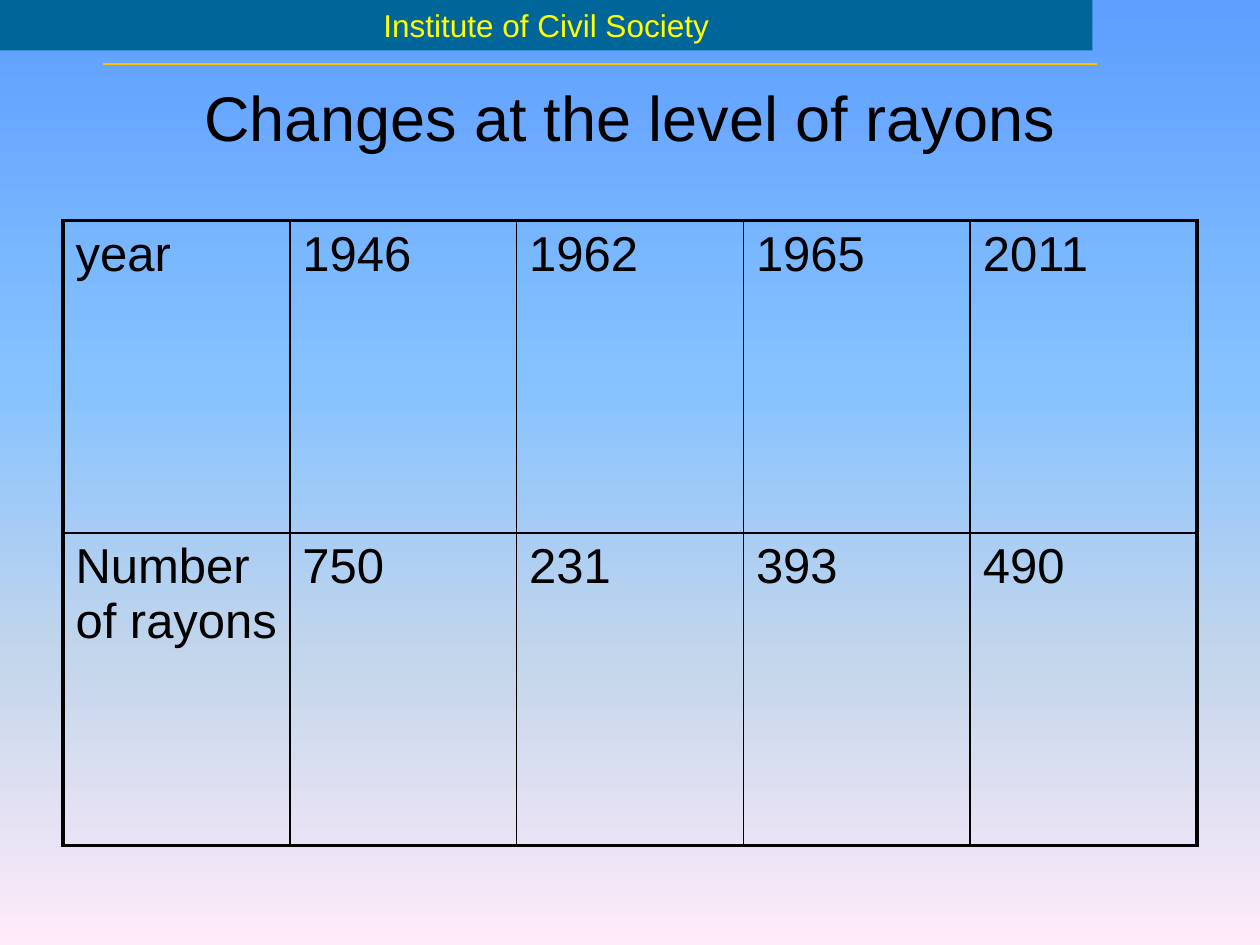
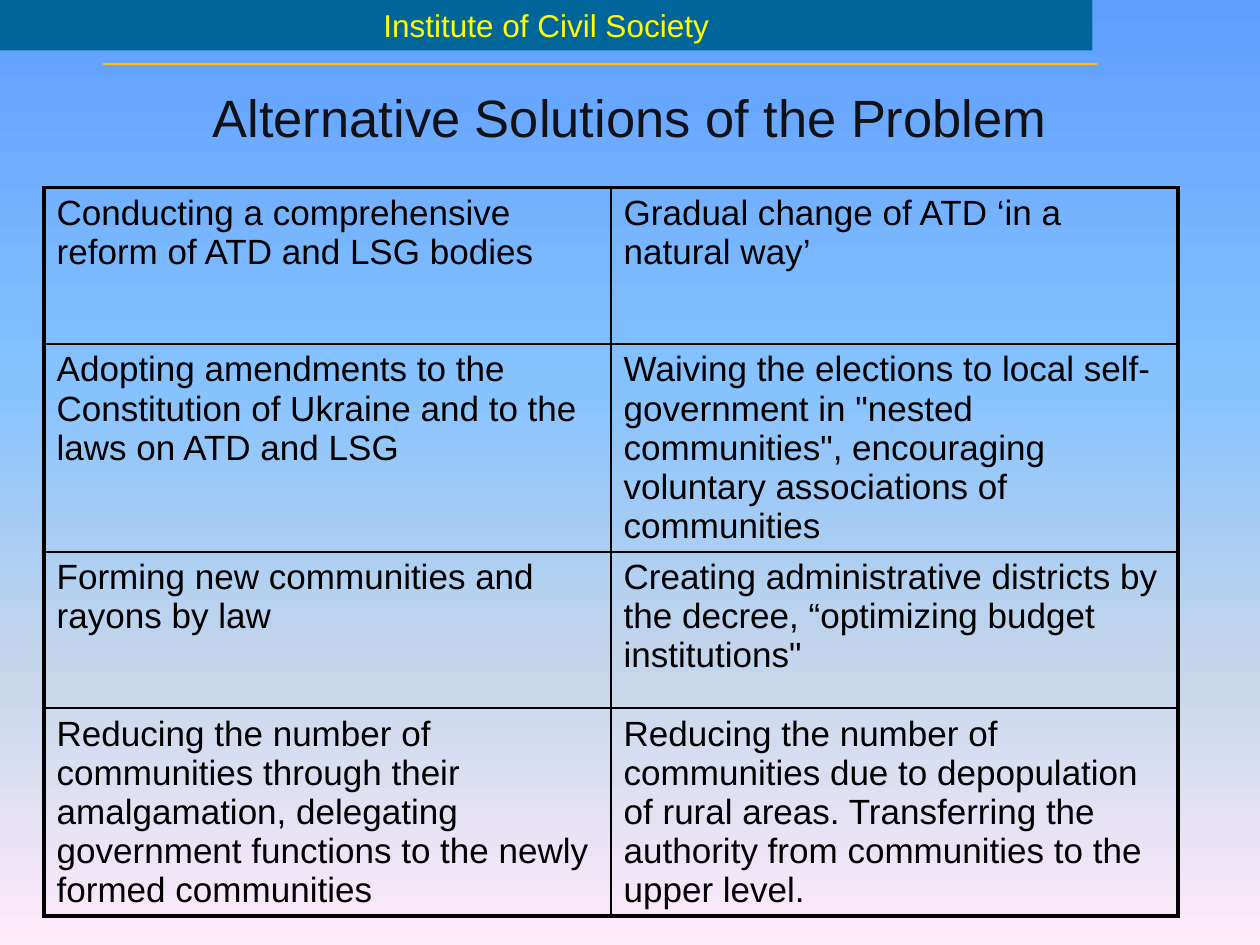
from dataclasses import dataclass

from lxml import etree
from pptx import Presentation
from pptx import util as u
from pptx.dml.color import RGBColor
from pptx.enum import shapes, text
from pptx.oxml import ns


@dataclass(frozen=True)
class Theme:
    font: str = "Arial"
    ink: str = "000000"
    soft_ink: str = "111118"
    band: str = "006699"
    band_text: str = "FFFF00"
    rule: str = "FFC000"
    sky: tuple = ((0, "5E9EFF"), (40, "85C2FF"), (70, "C4D6EB"), (100, "FFEBFA"))
    band_size: float = 18
    rule_width: float = 1
    inner_border: float = 1
    outer_border: float = 2.25
    space_before: int = 20  # percent of a line


THEME = Theme()
WIDTH, HEIGHT = u.Inches(10), u.Inches(7.5)
TITLE_ONLY = 5

RAYONS = [
    ["year", "1946", "1962", "1965", "2011"],
    ["Number of rayons", "750", "231", "393", "490"],
]
SOLUTIONS = [
    ["Conducting a comprehensive reform of ATD and LSG bodies",
     "Gradual change of ATD ‘in a natural way’"],
    ["Adopting amendments to the Constitution of Ukraine and to the laws on ATD and LSG",
     'Waiving the elections to local self-government in "nested communities", '
     "encouraging voluntary associations of communities"],
    ["Forming new communities and rayons by law",
     'Creating administrative districts by the decree, “optimizing budget institutions"'],
    ["Reducing the number of communities through their amalgamation, delegating "
     "government functions to the newly formed communities",
     "Reducing the number of communities due to depopulation of rural areas. "
     "Transferring the authority from communities to the upper level."],
]


# Helpers
def across(share):
    return round(WIDTH * share)


def down(share):
    return round(HEIGHT * share)


def add_element(parent, tag, **attributes):
    element = etree.SubElement(parent, ns.qn(tag))
    for name, value in attributes.items():
        element.set(name, str(value))
    return element


def apply_format(target, values):
    for name, value in values.items():
        setattr(target, name, value)


def write(frame, words, size, color, align=None):
    frame.text = words
    paragraph = frame.paragraphs[0]
    paragraph.alignment = align
    font = paragraph.runs[0].font
    apply_format(font, {"name": THEME.font, "size": u.Pt(size), "bold": False})
    font.color.rgb = RGBColor.from_string(color)
    return paragraph


# Shared frame of the slides
def paint_background(master):
    fill = master.background.fill
    fill.gradient()
    fill.gradient_angle = 270
    stops = master.element.find(".//" + ns.qn("a:gsLst"))
    for stop in list(stops):
        stops.remove(stop)
    for percent, color in THEME.sky:
        stop = add_element(stops, "a:gs", pos=percent * 1000)
        add_element(stop, "a:srgbClr", val=color)


def add_band(slide):
    band = slide.shapes.add_shape(
        shapes.MSO_SHAPE.RECTANGLE, 0, 0, across(0.867), u.Inches(0.4))
    band.shadow.inherit = False
    band.fill.solid()
    band.fill.fore_color.rgb = RGBColor.from_string(THEME.band)
    band.line.fill.background()
    write(band.text_frame, "Institute of Civil Society", THEME.band_size,
          THEME.band_text, text.PP_ALIGN.CENTER)


def add_rule(slide):
    top = u.Inches(0.51)
    rule = slide.shapes.add_connector(
        shapes.MSO_CONNECTOR.STRAIGHT, across(0.082), top, across(0.871), top)
    rule.line.color.rgb = RGBColor.from_string(THEME.rule)
    rule.line.width = u.Pt(THEME.rule_width)
    add_element(rule._element.spPr, "a:effectLst")


def add_titled_slide(presentation, words, size, color):
    slide = presentation.slides.add_slide(presentation.slide_layouts[TITLE_ONLY])
    title = slide.shapes.title
    apply_format(title, {"left": across(0.05), "top": down(0.04),
                         "width": across(0.9), "height": u.Inches(1.25)})
    title.text_frame.vertical_anchor = text.MSO_ANCHOR.MIDDLE
    write(title.text_frame, words, size, color, text.PP_ALIGN.CENTER)
    add_band(slide)
    add_rule(slide)
    return slide


# Table with a heavy outer frame and thin inner lines
def set_borders(cell, outer_sides):
    properties = cell._tc.get_or_add_tcPr()
    for side, is_outer in outer_sides.items():
        points = THEME.outer_border if is_outer else THEME.inner_border
        line = add_element(properties, f"a:ln{side}", w=u.Pt(points))
        add_element(add_element(line, "a:solidFill"), "a:srgbClr", val=THEME.ink)


def set_space_before(paragraph, percent):
    spacing = add_element(paragraph._p.get_or_add_pPr(), "a:spcBef")
    add_element(spacing, "a:spcPct", val=percent * 1000)


def add_grid_table(slide, rows, left, top, row_height, size):
    row_count, column_count = len(rows), len(rows[0])
    table = slide.shapes.add_table(row_count, column_count, left, top,
                                   across(0.9), row_height * row_count).table
    apply_format(table, {"first_row": False, "horz_banding": False})
    for r, row in enumerate(rows):
        for c, words in enumerate(row):
            cell = table.cell(r, c)
            paragraph = write(cell.text_frame, words, size, THEME.ink)
            set_space_before(paragraph, THEME.space_before)
            set_borders(cell, {"L": c == 0, "R": c == column_count - 1,
                               "T": r == 0, "B": r == row_count - 1})
            cell.fill.background()


def main():
    presentation = Presentation()
    apply_format(presentation, {"slide_width": WIDTH, "slide_height": HEIGHT})
    paint_background(presentation.slide_master)

    # Number of rayons by year
    slide = add_titled_slide(presentation, "Changes at the level of rayons", 36, THEME.ink)
    add_grid_table(slide, RAYONS, across(0.05), u.Inches(1.75), u.Inches(2.48), 28)

    # Two ways to solve the problem
    slide = add_titled_slide(presentation, "Alternative Solutions of the Problem",
                             30, THEME.soft_ink)
    add_grid_table(slide, SOLUTIONS, across(0.035), u.Inches(1.49), u.Inches(1.24), 20)

    presentation.save("out.pptx")


if __name__ == "__main__":
    main()
